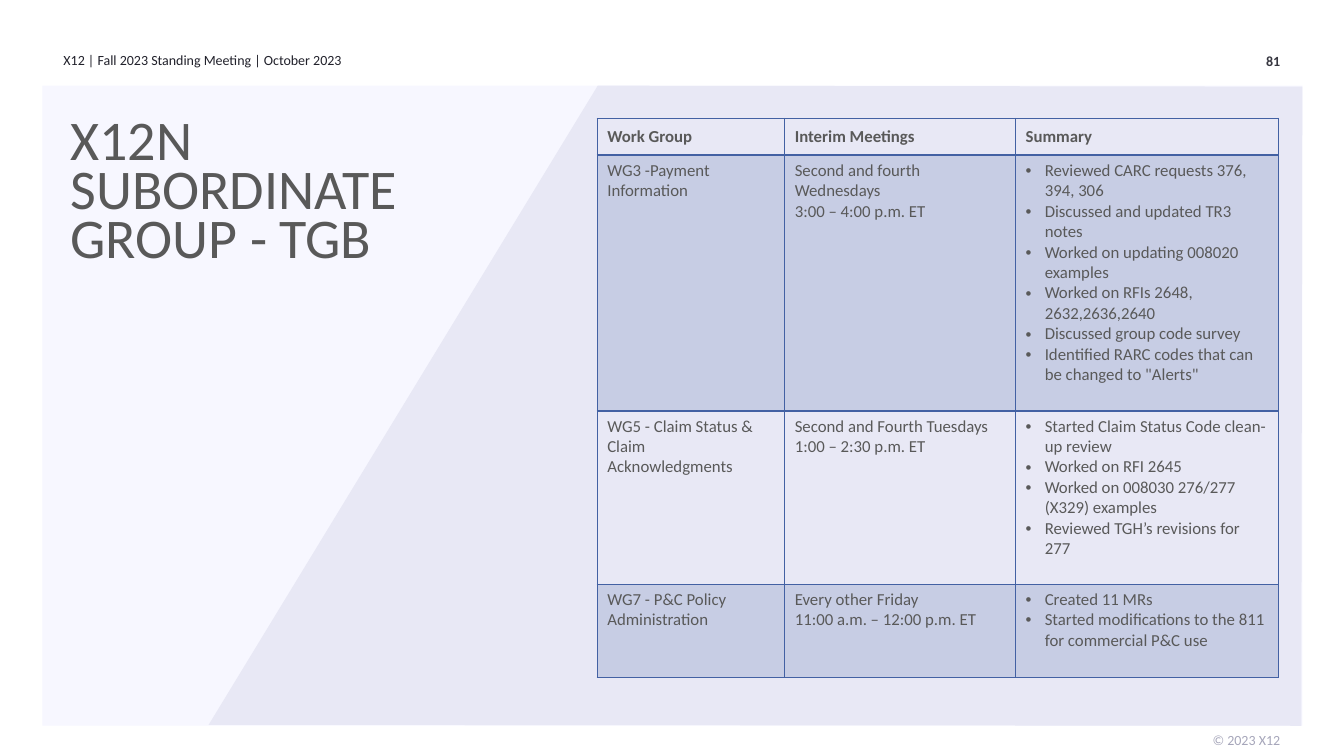
from dataclasses import dataclass

from lxml.etree import SubElement
from pptx import Presentation
from pptx.dml.color import RGBColor
from pptx.enum.shapes import MSO_SHAPE as Shape
from pptx.enum.text import MSO_ANCHOR as Anchor, MSO_AUTO_SIZE as AutoSize, PP_ALIGN as Align
from pptx.oxml import parse_xml
from pptx.oxml.ns import nsdecls, qn
from pptx.util import Pt


@dataclass(frozen=True)
class Theme:
    font: str = "Calibri"
    panel: str = "F7F7FF"
    slope: str = "E8E8F5"
    accent: str = "4361A3"
    body: str = "595959"
    header: str = "21212B"
    number: str = "363640"
    footer: str = "A6A6BA"
    title_size: int = 40
    table_size: int = 12
    small_size: int = 10


theme = Theme()


def add_span(para, text, size, color, bold=False):
    span = para.add_run()
    span.text = text
    span.font.name = theme.font
    span.font.size = Pt(size)
    span.font.bold = bold
    span.font.color.rgb = RGBColor.from_string(color)


def clear_insets(frame):
    frame.margin_left = frame.margin_right = frame.margin_top = frame.margin_bottom = 0
    frame.word_wrap = True
    frame.auto_size = AutoSize.NONE
    frame.vertical_anchor = Anchor.TOP


deck = Presentation()
deck.slide_width, deck.slide_height = Pt(960), Pt(540)
page = deck.slides.add_slide(deck.slide_layouts[5])

# Background panel and its sloping half
panel = page.shapes.add_shape(Shape.RECTANGLE, Pt(30.24), Pt(61.2), Pt(900), Pt(457.2))
builder = page.shapes.build_freeform(Pt(149.04), Pt(517.7))
builder.add_line_segments(
    [(Pt(426.96), Pt(61.2)), (Pt(930.24), Pt(61.9)), (Pt(929.5), Pt(518.4))], close=True)
slope = builder.convert_to_shape()
for shape, color in ((panel, theme.panel), (slope, theme.slope)):
    shape.shadow.inherit = False
    shape.fill.solid()
    shape.fill.fore_color.rgb = RGBColor.from_string(color)
    shape.line.fill.background()

# Header, page number and copyright line
for text, left, top, width, align, color, bold in (
    ("X12 | Fall 2023 Standing Meeting | October 2023", 45.36, 36.72, 324, Align.LEFT, theme.header, False),
    ("81", 805.68, 37.44, 108.72, Align.RIGHT, theme.number, True),
    ("© 2023 X12", 805.68, 522.72, 108.72, Align.RIGHT, theme.footer, False),
):
    box = page.shapes.add_textbox(Pt(left), Pt(top), Pt(width), Pt(18))
    clear_insets(box.text_frame)
    para = box.text_frame.paragraphs[0]
    para.alignment = align
    add_span(para, text, theme.small_size, color, bold)

# Title, raised above the background
title = page.shapes.title
page.shapes.element.append(title.element)
title.left, title.top, title.width, title.height = Pt(50.4), Pt(87.84), Pt(265.68), Pt(136.8)
clear_insets(title.text_frame)
para = title.text_frame.paragraphs[0]
para.alignment = Align.LEFT
para.line_spacing = Pt(35)
add_span(para, "X12N SUBORDINATE GROUP - TGB", theme.title_size, theme.body)

# Work group table: one list of paragraphs per cell
rows = [
    (["Work Group"], ["Interim Meetings"], ["Summary"]),
    (["WG3 -Payment Information"],
     ["Second and fourth Wednesdays", "3:00 – 4:00 p.m. ET"],
     ["Reviewed CARC requests 376, 394, 306",
      "Discussed and updated TR3 notes",
      "Worked on updating 008020 examples",
      "Worked on RFIs 2648, 2632,2636,2640",
      "Discussed group code survey",
      'Identified RARC codes that can be changed to "Alerts"']),
    (["WG5 - Claim Status & Claim Acknowledgments"],
     ["Second and Fourth Tuesdays", "1:00 – 2:30 p.m. ET"],
     ["Started Claim Status Code clean-up review",
      "Worked on RFI 2645",
      "Worked on 008030 276/277 (X329) examples",
      "Reviewed TGH’s revisions for 277"]),
    (["WG7 - P&C Policy Administration"],
     ["Every other Friday", "11:00 a.m. – 12:00 p.m. ET"],
     ["Created 11 MRs",
      "Started modifications to the 811 for commercial P&C use"]),
]
column_widths = (133.92, 164.88, 187.92)
row_heights = (26.2, 182.8, 123.8, 66.4)
table = page.shapes.add_table(
    len(rows), len(column_widths), Pt(426.6), Pt(84.6),
    Pt(sum(column_widths)), Pt(sum(row_heights))).table
table.horz_banding = False
for column, width in zip(table.columns, column_widths):
    column.width = Pt(width)
for row, height in zip(table.rows, row_heights):
    row.height = Pt(height)

for r, row in enumerate(rows):
    for c, lines in enumerate(row):
        cell = table.cell(r, c)
        cell.vertical_anchor = Anchor.TOP if r else Anchor.MIDDLE

        # Text, with bullets in the summary column
        for i, text in enumerate(lines):
            frame = cell.text_frame
            para = frame.add_paragraph() if i else frame.paragraphs[0]
            if r and c == 2:
                props = para._p.get_or_add_pPr()
                props.set("marL", str(Pt(13.68)))
                props.set("indent", str(Pt(-13.68)))
                SubElement(props, qn("a:buFont"), typeface="Arial")
                SubElement(props, qn("a:buChar"), char="•")
            add_span(para, text, theme.table_size, theme.body, bold=r == 0)

        # Translucent fill on every second row
        if r % 2:
            cell.fill.solid()
            cell.fill.fore_color.rgb = RGBColor.from_string(theme.accent)
            tint = cell._tc.tcPr.find(".//" + qn("a:srgbClr"))
            SubElement(tint, qn("a:alpha"), val="20000")
        else:
            cell.fill.background()

        # Borders, heavier under the header row
        for i, side in enumerate("LRTB"):
            weight = 2 if (r, side) in ((0, "B"), (1, "T")) else 1
            cell._tc.tcPr.insert(i, parse_xml(
                f'<a:ln{side} {nsdecls("a")} w="{Pt(weight)}"><a:solidFill>'
                f'<a:srgbClr val="{theme.accent}"/></a:solidFill></a:ln{side}>'))

deck.save("out.pptx")
